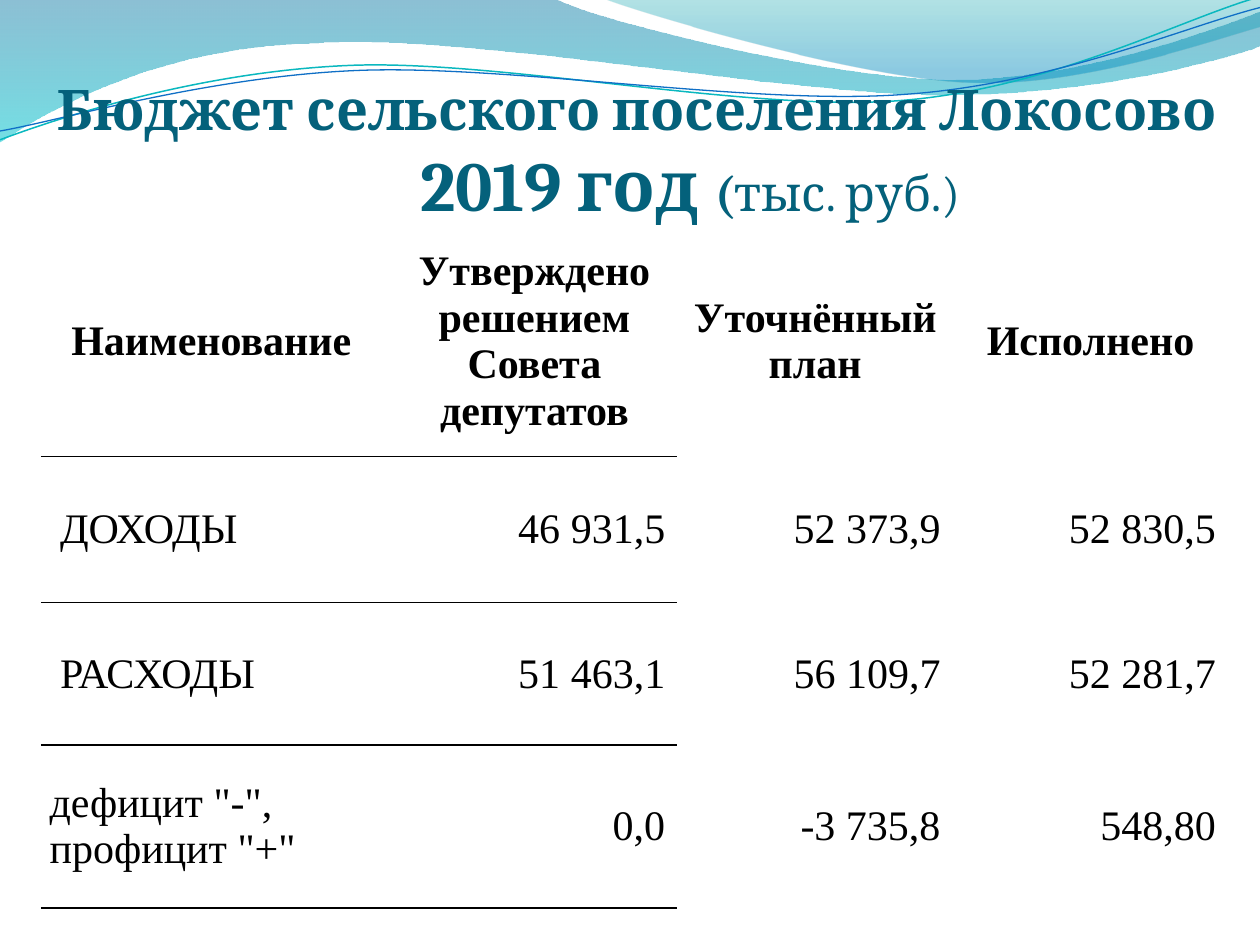
from collections import namedtuple
from dataclasses import dataclass

from lxml import etree
from pptx import Presentation
from pptx import util as u
from pptx.dml.color import RGBColor
from pptx.enum import text
from pptx.oxml import ns

Box = namedtuple("Box", "left top width height")


@dataclass(frozen=True)
class Theme:
    """Colours, fonts and type sizes of the deck."""
    heading: str = "04617B"
    ink: str = "000000"
    paper: str = "FFFFFF"
    heading_font: str = "Cambria"
    table_font: str = "Times New Roman"
    name_size: int = 32
    year_size: int = 40
    unit_size: int = 28
    table_size: int = 24
    border: int = 1
    wide_wave: tuple = ((0, "0074A1", 45), (1, "00C6CF", 55))
    corner_wave: tuple = ((0, "00A1A9", 30), (0.8, "008BBF", 45))
    upper_line: tuple = ("0AB8BF", 0.85)
    lower_line: tuple = ("0F6FC6", 0.75)


THEME = Theme()
WAVE_UNITS = 1000

WIDE_WAVE = [
    [(0, 0)], [(440, -1)],
    [(476, 17), (664, 63), (758, 63)],
    [(853, 63), (958, 26), (1000, 9)], [(1001, 36)],
    [(983, 44), (870, 76), (746, 75)],
    [(622, 75), (382, 28), (257, 34)],
    [(129, 36), (46, 83), (-1, 113)], [(0, 0)],
]
CORNER_WAVE = [
    [(479, -1)],
    [(509, 11), (682, 62), (769, 65)],
    [(856, 69), (961, 32), (1000, 21)], [(1000, 0)], [(479, -1)],
]
UPPER_LINE = [
    [(0, 111)],
    [(48, 93), (158, 57), (277, 52)],
    [(395, 47), (593, 89), (713, 80)],
    [(833, 71), (938, 15), (998, -2)],
]
LOWER_LINE = [
    [(0, 104)],
    [(47, 96), (164, 61), (283, 56)],
    [(403, 51), (597, 84), (717, 75)],
    [(836, 67), (941, 21), (1000, 6)],
]

BUDGET = [
    ["Наименование ", "Утверждено решением Совета депутатов", "Уточнённый план", "Исполнено"],
    [" ДОХОДЫ", "46 931,5", "52 373,9", "52 830,5"],
    [" РАСХОДЫ", "51 463,1", "56 109,7", "52 281,7"],
    ['дефицит "-", профицит "+"', "0,0", "-3 735,8", "548,80"],
]
COLUMN_WIDTHS = [7.05, 5.77, 5.55, 5.55]
ROW_HEIGHTS = [4.64, 2.95, 2.87, 3.28]
RULED_COLUMNS = 2


def assign(target, values):
    """Set each attribute of the target from a dict."""
    for key, value in values.items():
        setattr(target, key, value)


def add_run(paragraph, words, colour, **font):
    """Add a coloured run with the given font values."""
    run = paragraph.add_run()
    run.text = words
    assign(run.font, font)
    run.font.color.rgb = RGBColor.from_string(colour)


def bend(curve, segments):
    """Join each three-point segment of the outline into a cubic curve."""
    strokes = list(curve.element.iter(ns.qn("a:lnTo")))
    for segment in segments[1:]:
        group, strokes = strokes[:len(segment)], strokes[len(segment):]
        if len(group) == 3:
            cubic = etree.Element(ns.qn("a:cubicBezTo"))
            group[0].addprevious(cubic)
            for stroke in group:
                cubic.append(stroke[0])
                stroke.getparent().remove(stroke)


def add_curve(slide, box, segments, closed):
    """Draw a curved outline scaled to the box width."""
    start, *rest = [point for segment in segments for point in segment]
    builder = slide.shapes.build_freeform(*start, scale=box.width / WAVE_UNITS)
    builder.add_line_segments(rest, close=closed)
    curve = builder.convert_to_shape(box.left, box.top)
    bend(curve, segments)
    curve.shadow.inherit = False
    return curve


def add_waves(slide, box):
    """Draw the translucent waves and the two thin lines over them."""
    for segments, stops in ((WIDE_WAVE, THEME.wide_wave), (CORNER_WAVE, THEME.corner_wave)):
        wave = add_curve(slide, box, segments, True)
        wave.line.fill.background()
        wave.fill.gradient()
        wave.fill.gradient_angle = 270
        for stop, (position, colour, opacity) in zip(wave.fill.gradient_stops, stops):
            stop.position = position
            stop.color.rgb = RGBColor.from_string(colour)
            for tint in wave.element.iter(ns.qn("a:srgbClr")):
                if tint.get("val") == colour:
                    etree.SubElement(tint, ns.qn("a:alpha"), val=str(opacity * 1000))
    for segments, (colour, weight) in ((UPPER_LINE, THEME.upper_line),
                                       (LOWER_LINE, THEME.lower_line)):
        line = add_curve(slide, box, segments, False)
        line.fill.background()
        line.line.color.rgb = RGBColor.from_string(colour)
        line.line.width = u.Pt(weight)


def fill_title(slide, box):
    """Place the two-line heading in the title placeholder, above the waves."""
    title = slide.shapes.title
    title.element.getparent().append(title.element)
    assign(title, box._asdict())
    frame = title.text_frame
    assign(frame, dict(margin_left=0, margin_right=0, margin_top=u.Cm(0.13), margin_bottom=0,
                       word_wrap=True, auto_size=text.MSO_AUTO_SIZE.NONE,
                       vertical_anchor=text.MSO_ANCHOR.BOTTOM))
    name, year = frame.paragraphs[0], frame.add_paragraph()
    year._p.get_or_add_pPr().set("marL", str(u.Cm(2.13)))
    for paragraph, words, size, bold in (
        (name, "Бюджет сельского поселения Локосово", THEME.name_size, True),
        (year, "2019 год ", THEME.year_size, True),
        (year, "(", THEME.unit_size, True),
        (year, "тыс. руб.)", THEME.unit_size, False),
    ):
        paragraph.alignment = text.PP_ALIGN.CENTER
        add_run(paragraph, words, THEME.heading,
                name=THEME.heading_font, size=u.Pt(size), bold=bold)


def add_border(cell, side, colour):
    """Add one solid border line to a cell."""
    edge = etree.SubElement(cell._tc.get_or_add_tcPr(), ns.qn("a:ln" + side),
                            w=str(u.Pt(THEME.border)))
    paint = etree.SubElement(edge, ns.qn("a:solidFill"))
    etree.SubElement(paint, ns.qn("a:srgbClr"), val=colour)


def format_cell(cell, row, column, words):
    """Write one budget cell with its borders, margins and alignment."""
    ruled = column < RULED_COLUMNS
    for side in "LRTB":
        black = ruled and (side == "B" or side == "T" and row > 0)
        add_border(cell, side, THEME.ink if black else THEME.paper)
    cell.fill.solid()
    cell.fill.fore_color.rgb = RGBColor.from_string(THEME.paper)
    roomy = ruled if row == 0 else column > 0
    across, down = (u.Cm(0.25), u.Cm(0.13)) if roomy else (u.Cm(0.16), 0)
    assign(cell, dict(margin_left=across, margin_right=across, margin_top=down,
                      margin_bottom=down, vertical_anchor=text.MSO_ANCHOR.MIDDLE))
    align = text.PP_ALIGN
    paragraph = cell.text_frame.paragraphs[0]
    paragraph.alignment = align.CENTER if row == 0 else align.RIGHT if column else align.LEFT
    add_run(paragraph, words, THEME.ink, name=THEME.table_font,
            size=u.Pt(THEME.table_size), bold=row == 0)


def add_budget(slide, box):
    """Add the budget table."""
    table = slide.shapes.add_table(len(BUDGET), len(BUDGET[0]), *box).table
    assign(table, dict(first_row=False, horz_banding=False))
    for column, width in zip(table.columns, COLUMN_WIDTHS):
        column.width = u.Cm(width)
    for row, height in zip(table.rows, ROW_HEIGHTS):
        row.height = u.Cm(height)
    for r, entries in enumerate(BUDGET):
        for c, words in enumerate(entries):
            format_cell(table.cell(r, c), r, c, words)


def main():
    """Build the budget slide and save it."""
    deck = Presentation()
    assign(deck, dict(slide_width=u.Cm(25.4), slide_height=u.Cm(19.05)))
    slide = deck.slides.add_slide(deck.slide_layouts[5])
    add_waves(slide, Box(0, 0, deck.slide_width, u.Cm(2.9)))
    fill_title(slide, Box(u.Cm(1.07), u.Cm(0.79), u.Cm(23.55), u.Cm(3.76)))
    add_budget(slide, Box(u.Cm(0.84), u.Cm(4.56), u.Cm(23.92), u.Cm(13.74)))
    deck.save("out.pptx")


if __name__ == "__main__":
    main()
